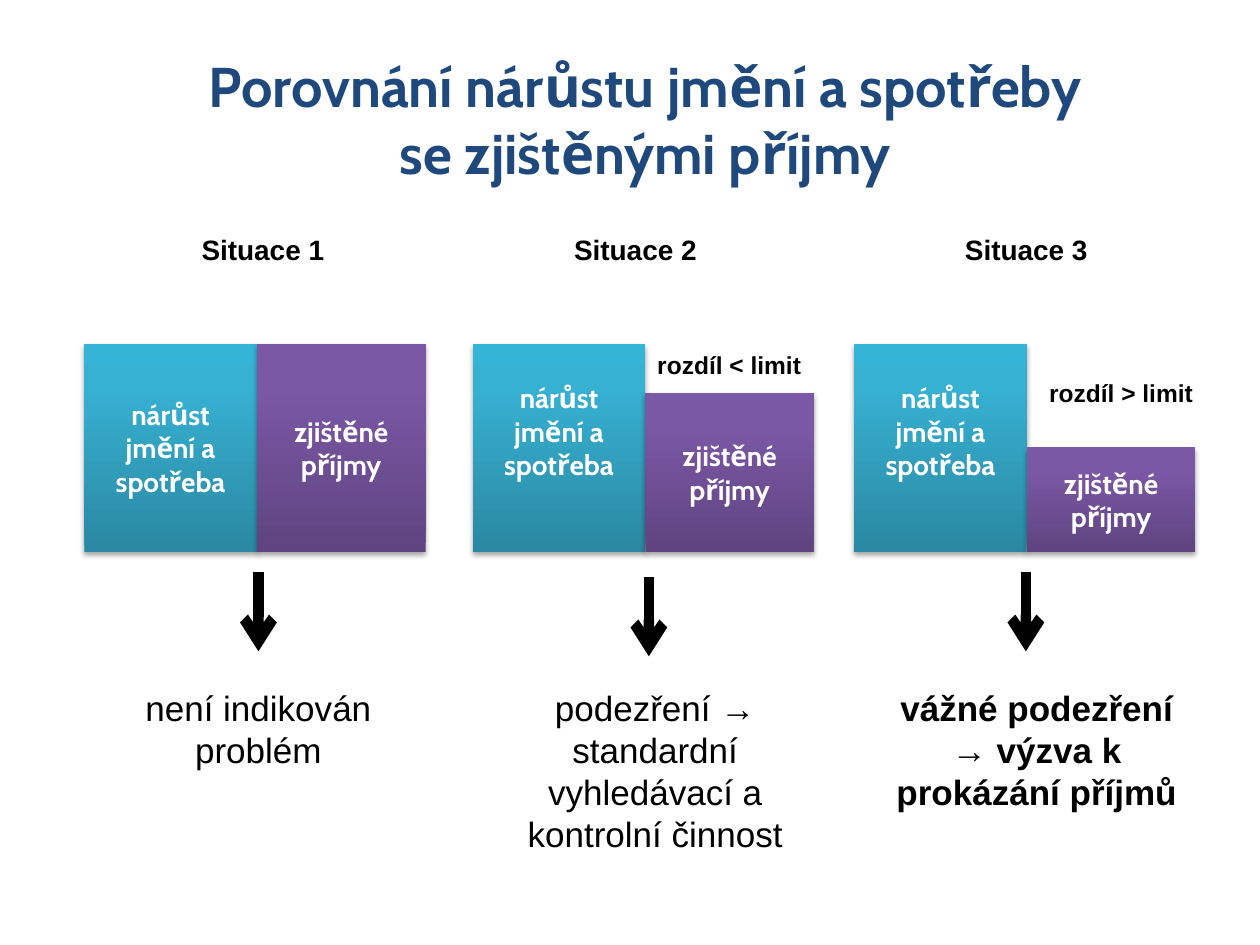
from copy import deepcopy
from dataclasses import dataclass

from pptx import Presentation
from pptx.dml.color import RGBColor
from pptx.enum.shapes import MSO_CONNECTOR, MSO_SHAPE
from pptx.enum.text import MSO_ANCHOR, PP_ALIGN
from pptx.oxml import parse_xml
from pptx.oxml.ns import nsdecls, qn
from pptx.util import Cm, Pt


@dataclass(frozen=True)
class Theme:
    head: str = "Cabin"
    body: str = "Arial"
    navy: str = "1F497D"
    black: str = "000000"
    white: str = "FFFFFF"
    teal: tuple = ((0, "2A88A2"), (0.8, "37B1D2"), (1, "34B4D6"))
    plum: tuple = ((0, "5F4480"), (0.8, "7B58A6"), (1, "7C57A8"))
    title: int = 32
    label: int = 16
    note: int = 14
    text: int = 20


class Board:
    """Draws styled elements on the current slide."""

    def __init__(self, theme, slide):
        self.theme = theme
        self.shapes = slide.shapes

    def style(self, frame, text, size, font, color, bold, align):
        frame.word_wrap = True
        frame.text = text
        para = frame.paragraphs[0]
        para.alignment = align
        face = para.runs[0].font
        face.name, face.size, face.bold = font, Pt(size), bold
        face.color.rgb = RGBColor.from_string(color)

    def text(self, text, left, top, width, height, size, font=None,
             color=None, bold=True, align=PP_ALIGN.CENTER):
        box = self.shapes.add_textbox(Cm(left), Cm(top), Cm(width), Cm(height))
        self.style(box.text_frame, text, size, font or self.theme.body,
                   color or self.theme.black, bold, align)

    def block(self, text, left, top, width, height, stops, lift=0):
        box = self.shapes.add_shape(MSO_SHAPE.RECTANGLE, Cm(left), Cm(top),
                                    Cm(width), Cm(height))
        box.line.fill.background()
        self.shade(box.fill, stops)
        self.shadow(box)
        frame = box.text_frame
        frame.vertical_anchor = MSO_ANCHOR.MIDDLE
        frame.margin_bottom = Cm(0.13 + lift)
        self.style(frame, text, self.theme.label, self.theme.head,
                   self.theme.white, True, PP_ALIGN.CENTER)

    def shade(self, fill, stops):
        fill.gradient()
        fill.gradient_angle = 90
        first = fill.gradient_stops[0]._gs
        first.addnext(deepcopy(first))
        for stop, (place, color) in zip(fill.gradient_stops, stops):
            stop.position = place
            stop.color.rgb = RGBColor.from_string(color)

    def shadow(self, box):
        box._element.spPr.append(parse_xml(
            f'<a:effectLst {nsdecls("a")}>'
            f'<a:outerShdw blurRad="{Pt(3.1)}" dist="{Pt(1.8)}" dir="5400000" rotWithShape="0">'
            f'<a:srgbClr val="{self.theme.black}"><a:alpha val="35000"/></a:srgbClr>'
            '</a:outerShdw></a:effectLst>'))

    def arrow(self, left, top, length):
        link = self.shapes.add_connector(MSO_CONNECTOR.STRAIGHT, Cm(left), Cm(top),
                                         Cm(left), Cm(top + length))
        link.line.color.rgb = RGBColor.from_string(self.theme.black)
        link.line.width = Pt(6)
        props = link._element.spPr
        props.find(qn("a:ln")).append(parse_xml(f'<a:tailEnd {nsdecls("a")} type="arrow"/>'))
        props.append(parse_xml(f'<a:effectLst {nsdecls("a")}/>'))


@dataclass(frozen=True)
class Case:
    left: float
    label: float
    top: float
    lift: float
    arrow: tuple
    end: str
    start: float
    height: float
    bold: bool = False
    note: tuple = ()


CASES = (
    Case(1.7, 2.9, 6.93, 0, (5.21, 11.53), "není indikován problém", 2.01, 1.96),
    Case(9.53, 10.41, 7.92, 0.68, (13.08, 11.63),
         "podezření → standardní vyhledávací a kontrolní činnost", 10.01, 3.68,
         note=("rozdíl < limit", 13, 6.93)),
    Case(17.22, 18.29, 9.02, 0.68, (20.68, 11.53),
         "vážné podezření → výzva k prokázání příjmů", 17.7, 2.82, True,
         ("rozdíl > limit", 20.9, 7.49)),
)


def main():
    deck = Presentation()
    deck.slide_width, deck.slide_height = Cm(25.4), Cm(19.05)
    theme = Theme()
    board = Board(theme, deck.slides.add_slide(deck.slide_layouts[6]))
    board.text("Porovnání nárůstu jmění a spotřeby se zjištěnými příjmy",
               3.51, 0.91, 19, 3, theme.title, theme.head, theme.navy)
    roof, floor, wide = 6.93, 11.13, 3.48
    for count, case in enumerate(CASES, 1):
        board.text(f"Situace {count}", case.label, 4.57, 4.8, 0.94, theme.label)
        board.block("nárůst jmění a spotřeba", case.left, roof, wide,
                    floor - roof, theme.teal, case.lift)
        board.block("zjištěné příjmy", case.left + wide, case.top, 3.4,
                    floor - case.top, theme.plum)
        if case.note:
            board.text(*case.note, 3.61, 0.86, theme.note, align=PP_ALIGN.LEFT)
        board.arrow(*case.arrow, 1.6)
        board.text(case.end, case.start, 13.72, 6.4, case.height,
                   theme.text, bold=case.bold)
    deck.save("out.pptx")


if __name__ == "__main__":
    main()
